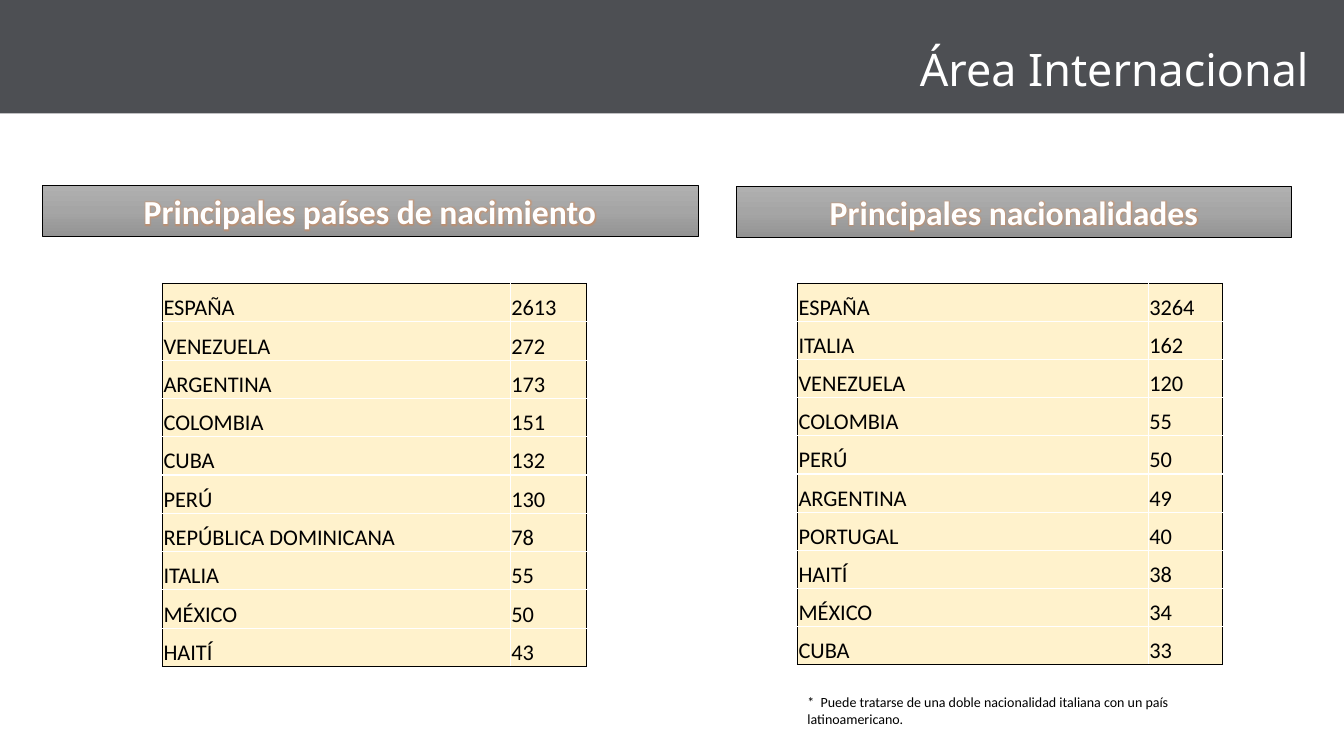
from copy import deepcopy

from lxml import etree
from pptx import Presentation
from pptx.dml.color import RGBColor
from pptx.enum.shapes import MSO_SHAPE
from pptx.enum.text import MSO_ANCHOR, MSO_AUTO_SIZE, PP_ALIGN
from pptx.oxml.ns import qn
from pptx.util import Inches, Pt

RECTANGLE = MSO_SHAPE.RECTANGLE
BOTTOM, MIDDLE, TOP = MSO_ANCHOR.BOTTOM, MSO_ANCHOR.MIDDLE, MSO_ANCHOR.TOP
LEFT, CENTER, RIGHT = PP_ALIGN.LEFT, PP_ALIGN.CENTER, PP_ALIGN.RIGHT
FIT_SHAPE = MSO_AUTO_SIZE.SHAPE_TO_FIT_TEXT

GRID_COLUMNS, GRID_ROWS = 160, 90
BLACK, WHITE = "000000", "FFFFFF"
CREAM, SLATE, ORANGE = "FFF2CC", "4D4F53", "ED7D31"
HEADING_GRADIENT = ("B0B0B0", "A5A5A5", "939393")
BODY_FONT, TITLE_FONT = "Calibri", "Noto Sans"

BIRTH_COUNTRIES = [
    ("ESPAÑA", "2613"), ("VENEZUELA", "272"), ("ARGENTINA", "173"),
    ("COLOMBIA", "151"), ("CUBA", "132"), ("PERÚ", "130"),
    ("REPÚBLICA DOMINICANA", "78"), ("ITALIA", "55"), ("MÉXICO", "50"),
    ("HAITÍ", "43"),
]
NATIONALITIES = [
    ("ESPAÑA", "3264"), ("ITALIA", "162"), ("VENEZUELA", "120"),
    ("COLOMBIA", "55"), ("PERÚ", "50"), ("ARGENTINA", "49"),
    ("PORTUGAL", "40"), ("HAITÍ", "38"), ("MÉXICO", "34"), ("CUBA", "33"),
]


def color(value):
    return RGBColor.from_string(value)


class SlideBuilder:
    """Draws styled elements on one slide, placed in grid columns and rows."""

    def __init__(self, presentation):
        self.column = presentation.slide_width / GRID_COLUMNS
        self.row = presentation.slide_height / GRID_ROWS
        self.slide = presentation.slides.add_slide(presentation.slide_layouts[6])

    def place(self, left, top, width, height):
        return (round(left * self.column), round(top * self.row),
                round(width * self.column), round(height * self.row))

    def add_run(self, frame, text, size, ink, font=BODY_FONT, align=LEFT, bold=False):
        paragraph = frame.paragraphs[0]
        paragraph.alignment = align
        run = paragraph.add_run()
        run.text = text
        run.font.size = Pt(size)
        run.font.bold = bold
        run.font.color.rgb = color(ink)
        run.font.name = font
        return run

    def rectangle(self, *area):
        shape = self.slide.shapes.add_shape(RECTANGLE, *self.place(*area))
        shape.shadow.inherit = False
        return shape

    def band(self, *area):
        shape = self.rectangle(*area)
        shape.fill.solid()
        shape.fill.fore_color.rgb = color(SLATE)
        shape.line.fill.background()

    def heading(self, text, *area):
        shape = self.rectangle(*area)
        shape.line.color.rgb = color(BLACK)
        shape.line.width = Pt(0.5)
        shape.fill.gradient()
        shape.fill.gradient_angle = 270
        first_stop = shape.fill.gradient_stops[0]._gs
        first_stop.addnext(deepcopy(first_stop))
        for index, stop in enumerate(shape.fill.gradient_stops):
            stop.position = index / 2
            stop.color.rgb = color(HEADING_GRADIENT[index])
        frame = shape.text_frame
        frame.word_wrap = True
        frame.auto_size = FIT_SHAPE
        frame.vertical_anchor = MIDDLE
        self.glow(self.add_run(frame, text, 24, WHITE, align=CENTER, bold=True))

    def glow(self, run):
        effects = etree.Element(qn("a:effectLst"))
        halo = etree.SubElement(effects, qn("a:glow"), rad="38100")
        tint = etree.SubElement(halo, qn("a:srgbClr"), val=ORANGE)
        etree.SubElement(tint, qn("a:alpha"), val="40000")
        run.font._element.find(qn("a:solidFill")).addnext(effects)

    def text(self, text, area, size, ink, font=BODY_FONT, align=LEFT):
        frame = self.slide.shapes.add_textbox(*self.place(*area)).text_frame
        frame.word_wrap = True
        frame.auto_size = FIT_SHAPE
        frame.vertical_anchor = TOP
        self.add_run(frame, text, size, ink, font, align)

    def table(self, entries, area, value_width):
        left, top, width, height = area
        shape = self.slide.shapes.add_table(len(entries), 2, *self.place(*area))
        table = shape.table
        table.first_row = table.horz_banding = False
        table.columns[0].width = round((width - value_width) * self.column)
        table.columns[1].width = round(value_width * self.column)
        last = len(entries) - 1
        for index, entry in enumerate(entries):
            table.rows[index].height = round(height / len(entries) * self.row)
            for position, text in enumerate(entry):
                cell = table.cell(index, position)
                outer_sides = {"L": position == 0, "R": position == 1,
                               "T": index == 0, "B": index == last}
                self.cell(cell, text, outer_sides)

    def cell(self, cell, text, outer_sides):
        cell.margin_left = cell.margin_right = cell.margin_top = Inches(0.01)
        cell.margin_bottom = 0
        cell.vertical_anchor = BOTTOM
        cell.fill.solid()
        cell.fill.fore_color.rgb = color(CREAM)
        self.add_run(cell.text_frame, text, 16, BLACK)
        properties = cell._tc.get_or_add_tcPr()
        for index, (side, outer) in enumerate(outer_sides.items()):
            border = etree.Element(qn(f"a:ln{side}"), w=str(Pt(1)))
            fill = etree.SubElement(border, qn("a:solidFill"))
            etree.SubElement(fill, qn("a:srgbClr"), val=BLACK if outer else WHITE)
            properties.insert(index, border)


def main():
    presentation = Presentation()
    presentation.slide_width = Inches(13.33)
    presentation.slide_height = Inches(7.5)
    builder = SlideBuilder(presentation)

    builder.band(0, 0, GRID_COLUMNS, 13.5)
    builder.text("Área Internacional", (101.7, 4.4, 55.3, 7.7), 32, WHITE,
                 TITLE_FONT, RIGHT)
    builder.heading("Principales países de nacimiento", 5, 22.1, 78.1, 6.05)
    builder.heading("Principales nacionalidades", 87.7, 22.2, 66, 6.05)
    builder.table(BIRTH_COUNTRIES, (19.35, 33.75, 50.5, 45.6), 9.1)
    builder.table(NATIONALITIES, (94.95, 33.75, 50.6, 45.4), 8.85)
    builder.text("*  Puede tratarse de una doble nacionalidad italiana con un país "
                 "latinoamericano.", (94.95, 82, 56.3, 5.25), 10, BLACK)
    presentation.save("out.pptx")


if __name__ == "__main__":
    main()
